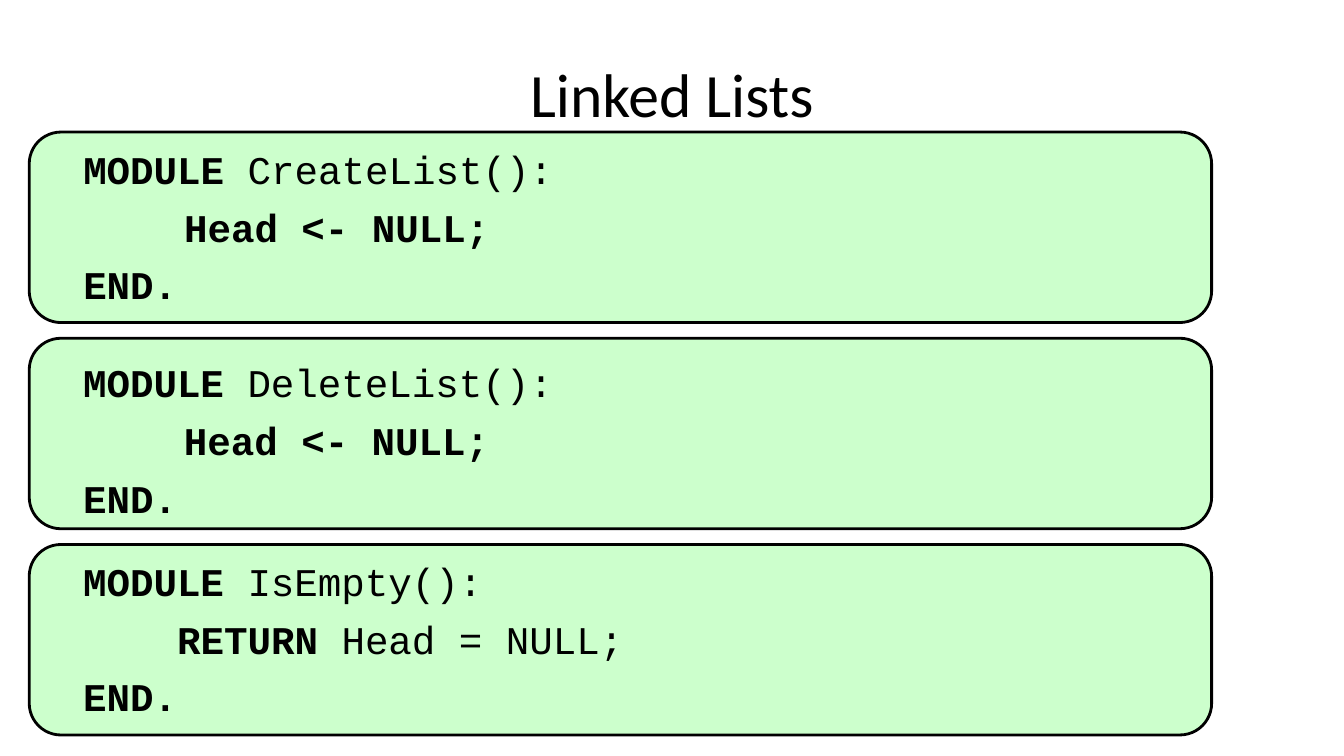
from pptx import Presentation
from pptx.dml.color import RGBColor
from pptx.enum.shapes import MSO_SHAPE as Shape
from pptx.enum.text import MSO_ANCHOR as Anchor, MSO_AUTO_SIZE as AutoSize, PP_ALIGN as Align
from pptx.oxml.xmlchemy import OxmlElement
from pptx.util import Pt

BLACK = RGBColor(0x00, 0x00, 0x00)
MINT = RGBColor(0xCC, 0xFF, 0xCC)

PANEL_LEFT, PANEL_TOP, PANEL_WIDTH, PANEL_HEIGHT, PANEL_PITCH = 20.9, 94.3, 844.6, 136.1, 147.3
TEXT_LEFT, TEXT_WIDTH = 48, 864
MARGIN, TAB_INDENT, SPACE_INDENT = 4.3, 76.3, 71.5

MODULES = [
    (100.1, 198.7, "CreateList():", TAB_INDENT, [("Head <- NULL;", True)]),
    (252.7, 147.6, "DeleteList():", TAB_INDENT, [("Head <- NULL;", True)]),
    (394.6, 141.8, "IsEmpty():", SPACE_INDENT, [("RETURN ", True), ("Head = NULL;", False)]),
]


def write(para, text, font="Courier New", size=28, bold=False, color=BLACK):
    span = para.add_run()
    span.text = text
    span.font.name = font
    span.font.size = Pt(size)
    span.font.bold = bold
    span.font.color.rgb = color


class SlideBuilder:
    """Draws titled code panels on one slide in a shared style."""

    def __init__(self, deck):
        self.page = deck.slides.add_slide(deck.slide_layouts[1])

    def place(self, box, left, top, width, height):
        box.left, box.top, box.width, box.height = map(Pt, (left, top, width, height))
        box.text_frame.word_wrap = True
        box.text_frame.auto_size = AutoSize.NONE

    def title(self, text):
        box = self.page.shapes.title
        self.place(box, TEXT_LEFT, 21.6, TEXT_WIDTH, 90)
        box.text_frame.vertical_anchor = Anchor.MIDDLE
        para = box.text_frame.paragraphs[0]
        para.alignment = Align.CENTER
        write(para, text, font="Calibri", size=44)

    def panel(self, top):
        panel = self.page.shapes.add_shape(
            Shape.ROUNDED_RECTANGLE, Pt(PANEL_LEFT), Pt(top), Pt(PANEL_WIDTH), Pt(PANEL_HEIGHT))
        panel.shadow.inherit = False
        panel.fill.solid()
        panel.fill.fore_color.rgb = MINT
        panel.line.color.rgb = BLACK
        panel.line.width = Pt(2)
        self.page.shapes.title.element.addprevious(panel.element)

    def body(self):
        return self.page.placeholders[1]

    def text_box(self):
        return self.page.shapes.add_textbox(0, 0, 0, 0)

    def code(self, box, top, height, lines):
        self.place(box, TEXT_LEFT, top, TEXT_WIDTH, height)
        frame = box.text_frame
        for index, (indent, spans) in enumerate(lines):
            para = frame.add_paragraph() if index else frame.paragraphs[0]
            para.space_before = Pt(7.6)
            properties = para._p.get_or_add_pPr()
            properties.set("marL", str(Pt(indent)))
            properties.set("indent", "0")
            properties.append(OxmlElement("a:buNone"))
            for text, bold in spans:
                write(para, text, bold=bold)


def main():
    deck = Presentation()
    deck.slide_width, deck.slide_height = Pt(960), Pt(540)
    builder = SlideBuilder(deck)
    builder.title("Linked Lists")
    for index, (top, height, name, indent, statement) in enumerate(MODULES):
        builder.panel(PANEL_TOP + index * PANEL_PITCH)
        lines = [
            (MARGIN, [("MODULE ", True), (name, False)]),
            (indent, statement),
            (MARGIN, [("END.", True)]),
        ]
        box = builder.text_box() if index else builder.body()
        builder.code(box, top, height, lines)
    deck.save("out.pptx")


if __name__ == "__main__":
    main()
